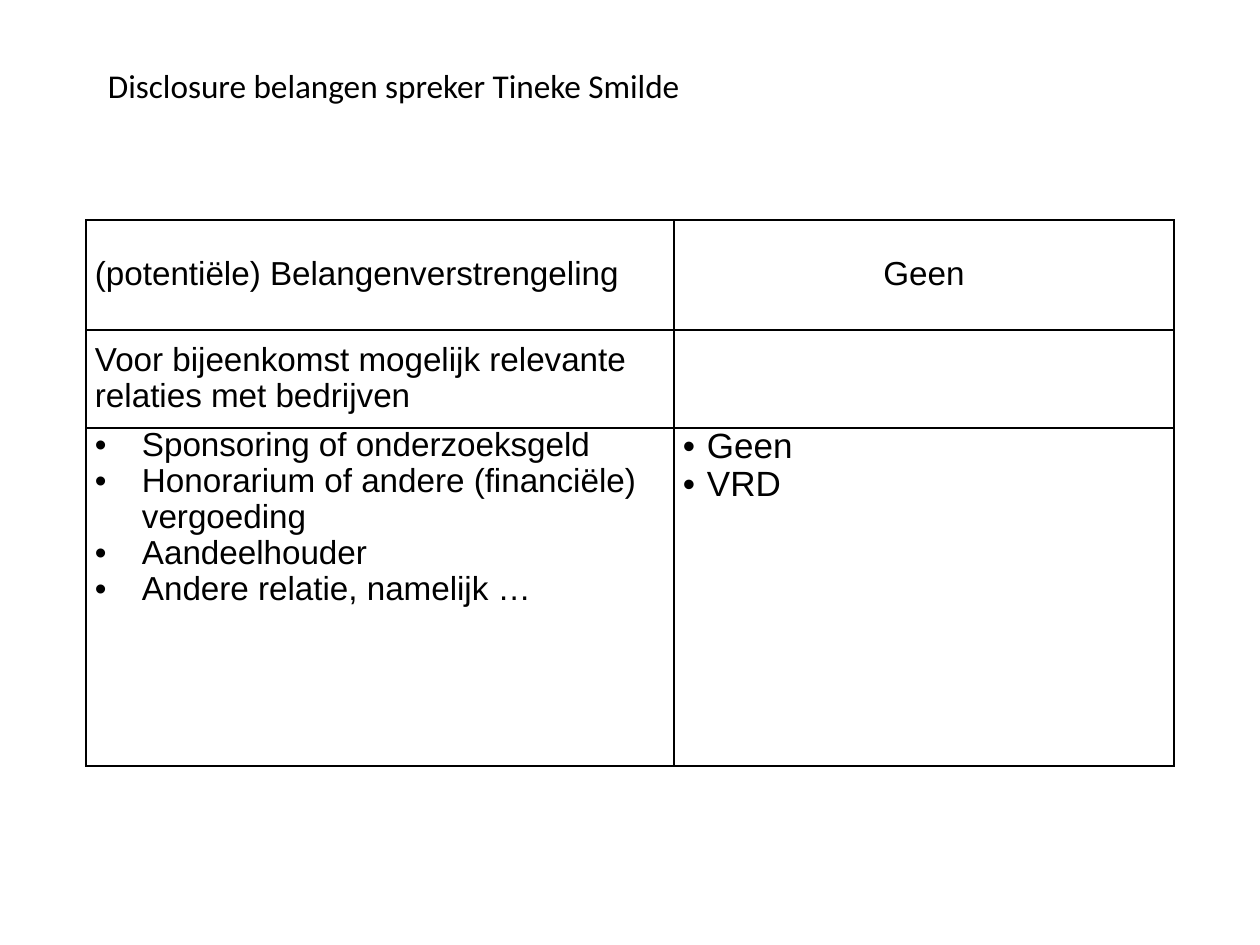
from lxml.etree import SubElement
from pptx import Presentation
from pptx.dml.color import RGBColor
from pptx.enum.text import MSO_ANCHOR, PP_ALIGN
from pptx.oxml.ns import qn
from pptx.util import Emu, Pt

PX = 914400 // 126
BLACK = "000000"

# Content
TITLE = "Disclosure belangen spreker Tineke Smilde"
COLUMN_WIDTHS = [588, 500]
ROW_HEIGHTS = [110, 98, 338]
DISCLOSURES = [
    [["(potentiële) Belangenverstrengeling"], ["Geen"]],
    [["Voor bijeenkomst mogelijk relevante relaties met bedrijven"], []],
    [["Sponsoring of onderzoeksgeld",
      "Honorarium of andere (financiële) vergoeding",
      "Aandeelhouder",
      "Andere relatie, namelijk …"],
     ["Geen", "VRD"]],
]
BULLET_ROW = 2
BULLET_INDENTS = [47, 24]
BULLET_SIZES = [19, 20]


def px(length):
    return Emu(length * PX)


def color(hex_value):
    return RGBColor.from_string(hex_value)


def style_font(font, name, size):
    font.name = name
    font.size = Pt(size)
    font.color.rgb = color(BLACK)


def add_bullet(paragraph, indent):
    properties = paragraph._p.get_or_add_pPr()
    properties.set("marL", str(px(indent)))
    properties.set("indent", str(-px(indent)))
    SubElement(properties, qn("a:buFont"), typeface="Arial")
    SubElement(properties, qn("a:buChar"), char="•")


def add_borders(cell):
    properties = cell._tc.get_or_add_tcPr()
    for position, side in enumerate(("a:lnL", "a:lnR", "a:lnT", "a:lnB")):
        border = properties.makeelement(qn(side), {"w": str(Pt(1))})
        fill = SubElement(border, qn("a:solidFill"))
        SubElement(fill, qn("a:srgbClr"), val=BLACK)
        properties.insert(position, border)


def fill_cell(cell, lines, row, column):
    bulleted = row == BULLET_ROW
    cell.fill.background()
    add_borders(cell)
    cell.margin_left = cell.margin_right = px(9)
    cell.margin_top = cell.margin_bottom = 0
    cell.vertical_anchor = MSO_ANCHOR.TOP if bulleted else MSO_ANCHOR.MIDDLE
    cell.text_frame.text = "\n".join(lines)
    for paragraph in cell.text_frame.paragraphs:
        paragraph.line_spacing = 0.97
        if bulleted:
            add_bullet(paragraph, BULLET_INDENTS[column])
        elif column == 1:
            paragraph.alignment = PP_ALIGN.CENTER
        size = BULLET_SIZES[column] if bulleted else 19
        for run in paragraph.runs:
            style_font(run.font, "Arial", size)


presentation = Presentation()
presentation.slide_width, presentation.slide_height = px(1260), px(945)
slide = presentation.slides.add_slide(presentation.slide_layouts[5])

# Title
title = slide.shapes.title
title.left, title.top, title.width, title.height = map(px, (108, 38, 1134, 157))
title_frame = title.text_frame
title_frame.text = TITLE
title_frame.word_wrap = True
title_frame.vertical_anchor = MSO_ANCHOR.BOTTOM
title_frame.margin_left = title_frame.margin_right = title_frame.margin_top = 0
title_frame.margin_bottom = px(90)
title_frame.paragraphs[0].alignment = PP_ALIGN.LEFT
style_font(title_frame.paragraphs[0].runs[0].font, "Calibri", 19)

# Disclosure table
table = slide.shapes.add_table(
    len(ROW_HEIGHTS), len(COLUMN_WIDTHS), px(86), px(220),
    px(sum(COLUMN_WIDTHS)), px(sum(ROW_HEIGHTS))).table
table.first_row = table.horz_banding = False
for table_column, width in zip(table.columns, COLUMN_WIDTHS):
    table_column.width = px(width)
for table_row, height in zip(table.rows, ROW_HEIGHTS):
    table_row.height = px(height)
for row, cells in enumerate(DISCLOSURES):
    for column, lines in enumerate(cells):
        fill_cell(table.cell(row, column), lines, row, column)

presentation.save("out.pptx")
